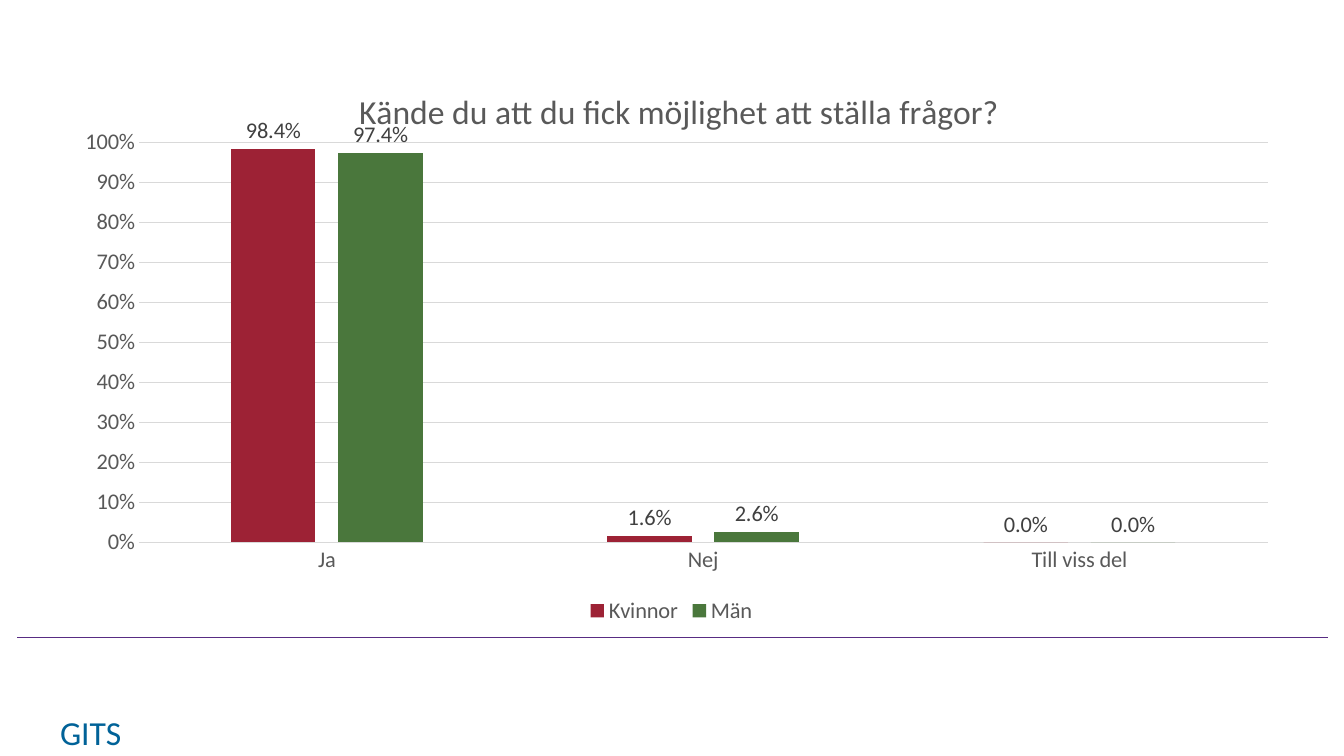
from dataclasses import dataclass

from lxml import etree
from pptx import Presentation
from pptx import util as u
from pptx.chart.data import CategoryChartData
from pptx.dml.color import RGBColor
from pptx.enum import chart as charts, shapes, text
from pptx.oxml import ns


@dataclass(frozen=True)
class Theme:
    font: str = "Calibri"
    large: int = 24
    body: int = 16
    brand: str = "006298"
    rule: str = "582C83"
    grey: str = "595959"
    label: str = "404040"
    grid: str = "D9D9D9"
    series: tuple = ("9D2235", "4A773C")


class SlideBuilder:
    """Holds the theme and slide; lengths are shares of the slide's size."""

    def __init__(self, presentation, theme):
        self.theme = theme
        self.width = presentation.slide_width
        self.height = presentation.slide_height
        self.slide = presentation.slides.add_slide(presentation.slide_layouts[6])

    def box(self, left, top, width, height):
        return [round(share * size) for share, size in
                zip((left, top, width, height), (self.width, self.height) * 2)]

    def style(self, font, size, color):
        values = {"name": self.theme.font, "size": u.Pt(size), "bold": False}
        for name, value in values.items():
            setattr(font, name, value)
        font.color.rgb = RGBColor.from_string(color)

    def outline(self, line, color, width):
        line.color.rgb = RGBColor.from_string(color)
        line.width = u.Pt(width)

    def label(self, words, *place):
        frame = self.slide.shapes.add_textbox(*self.box(*place)).text_frame
        values = {"text": words, "word_wrap": True,
                  "auto_size": text.MSO_AUTO_SIZE.SHAPE_TO_FIT_TEXT}
        for name, value in values.items():
            setattr(frame, name, value)
        paragraph = frame.paragraphs[0]
        paragraph.alignment = text.PP_ALIGN.CENTER
        self.style(paragraph.runs[0].font, self.theme.large, self.theme.brand)

    def rule(self, left, right, level):
        start_x, y, end_x, _ = self.box(left, level, right, 0)
        connector = self.slide.shapes.add_connector(
            shapes.MSO_CONNECTOR.STRAIGHT, start_x, y, end_x, y)
        self.outline(connector.line, self.theme.rule, 1)
        etree.SubElement(connector._element.spPr, ns.qn("a:effectLst"))

    def layout(self, **settings):
        layout = etree.Element(ns.qn("c:layout"))
        manual = etree.SubElement(layout, ns.qn("c:manualLayout"))
        for name, value in settings.items():
            etree.SubElement(manual, ns.qn(f"c:{name}")).set("val", str(value))
        return layout

    def column_chart(self, title, categories, series, *place):
        theme = self.theme
        data = CategoryChartData(number_format="0.0%")
        data.categories = categories
        for name, values in series.items():
            data.add_series(name, values)
        chart = self.slide.shapes.add_chart(
            charts.XL_CHART_TYPE.COLUMN_CLUSTERED, *self.box(*place), data).chart
        self.style(chart.font, theme.body, theme.grey)

        # Title and plot area
        chart.has_title = True
        frame = chart.chart_title.text_frame
        frame.text = title
        self.style(frame.paragraphs[0].runs[0].font, theme.large, theme.grey)
        title_element = chart.chart_title._element
        for old in title_element.findall(ns.qn("c:layout")):
            title_element.remove(old)
        title_element.find(ns.qn("c:tx")).addnext(
            self.layout(xMode="edge", yMode="edge", x=0.24, y=0.04))
        plot_area = chart._chartSpace.chart.plotArea
        for old in plot_area.findall(ns.qn("c:layout")):
            plot_area.remove(old)
        plot_area.insert(0, self.layout(
            layoutTarget="inner", xMode="edge", yMode="edge",
            x=0.065, y=0.145, w=0.922, h=0.703))

        # Axes
        for axis in (chart.category_axis, chart.value_axis):
            axis.major_tick_mark = axis.minor_tick_mark = charts.XL_TICK_MARK.NONE
            self.style(axis.tick_labels.font, theme.body, theme.grey)
        self.outline(chart.category_axis.format.line, theme.grid, 0.75)
        scale = {"minimum_scale": 0, "maximum_scale": 1, "major_unit": 0.1,
                 "has_major_gridlines": True}
        for name, value in scale.items():
            setattr(chart.value_axis, name, value)
        chart.value_axis.format.line.fill.background()
        self.outline(chart.value_axis.major_gridlines.format.line, theme.grid, 0.75)
        chart.value_axis.tick_labels.number_format = "0%"
        chart.value_axis.tick_labels.number_format_is_linked = False

        # Columns and their labels
        plot = chart.plots[0]
        for name, value in {"gap_width": 219, "overlap": -27,
                            "vary_by_categories": False}.items():
            setattr(plot, name, value)
        label_format = {"show_value": True, "number_format": "0.0%",
                        "number_format_is_linked": False,
                        "position": charts.XL_LABEL_POSITION.OUTSIDE_END}
        for columns, color in zip(plot.series, theme.series):
            columns.format.fill.solid()
            columns.format.fill.fore_color.rgb = RGBColor.from_string(color)
            for name, value in label_format.items():
                setattr(columns.data_labels, name, value)
            self.style(columns.data_labels.font, theme.body, theme.label)

        # Legend
        chart.has_legend = True
        chart.legend.position = charts.XL_LEGEND_POSITION.BOTTOM
        chart.legend.include_in_layout = False
        self.style(chart.legend.font, theme.body, theme.grey)


def main():
    presentation = Presentation()
    presentation.slide_width = u.Inches(13.33)
    presentation.slide_height = u.Inches(7.5)
    builder = SlideBuilder(presentation, Theme())

    # Footer
    builder.label("GITS", 0.035, 0.935, 0.065, 0.067)
    builder.rule(0.013, 0.988, 0.843)

    # Answers by gender
    builder.column_chart(
        "Kände du att du fick möjlighet att ställa frågor?",
        ["Ja", "Nej", "Till viss del"],
        {"Kvinnor": (0.984, 0.016, 0), "Män": (0.974, 0.026, 0)},
        0.044, 0.079, 0.911, 0.753)
    presentation.save("out.pptx")


if __name__ == "__main__":
    main()
